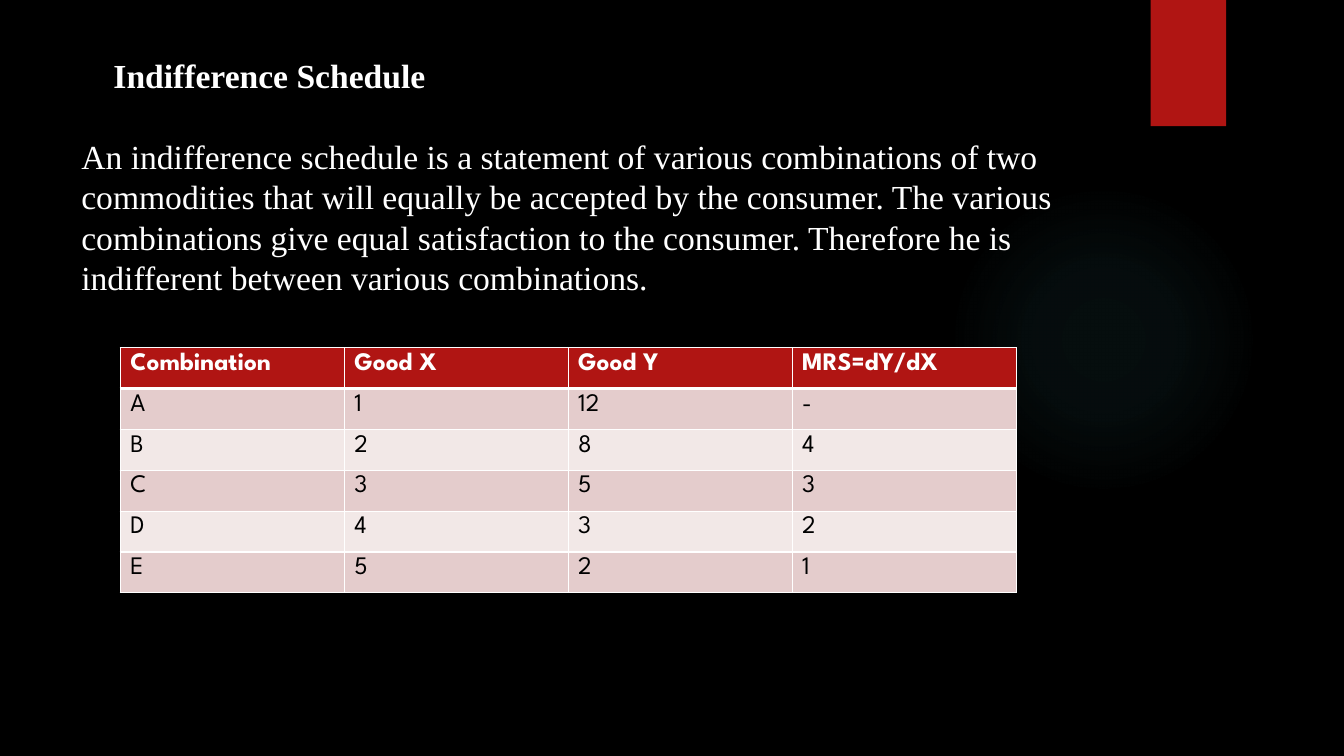
from lxml import etree
from pptx import Presentation
from pptx.dml.color import RGBColor
from pptx.enum.shapes import MSO_SHAPE
from pptx.oxml.ns import qn
from pptx.util import Cm, Pt

OVAL = MSO_SHAPE.OVAL
RECTANGLE = MSO_SHAPE.RECTANGLE
BLACK = RGBColor(0x00, 0x00, 0x00)
WHITE = RGBColor(0xFF, 0xFF, 0xFF)
RED = RGBColor(0xB0, 0x15, 0x13)
ROSE = RGBColor(0xE4, 0xCC, 0xCC)
PALE_ROSE = RGBColor(0xF2, 0xE8, 0xE7)
TEAL = RGBColor(0x50, 0xB9, 0xC1)
BODY_FONT = "Times New Roman"
TABLE_FONT = "League Spartan"

HEADING = "Indifference Schedule"
DEFINITION = (
    "An indifference schedule is a statement of various combinations of two "
    "commodities that will equally be accepted by the consumer. The various "
    "combinations give equal satisfaction to the consumer. Therefore he is "
    "indifferent between various combinations."
)
SCHEDULE = [
    ("Combination", "Good X", "Good Y", "MRS=dY/dX"),
    ("A", "1", "12", "-"),
    ("B", "2", "8", "4"),
    ("C", "3", "5", "3"),
    ("D", "4", "3", "2"),
    ("E", "5", "2", "1"),
]
GLOW_STOPS = [(0, 7), (36, 6), (69, 0)]


def add_child(parent, tag, **attributes):
    return etree.SubElement(parent, qn(tag), attributes)


def add_plain_shape(slide, preset, left, top, width, height, color):
    shape = slide.shapes.add_shape(preset, left, top, width, height)
    shape.shadow.inherit = False
    shape.fill.solid()
    shape.fill.fore_color.rgb = color
    shape.line.fill.background()
    return shape


def add_glow(slide, left, top, size):
    glow = add_plain_shape(slide, OVAL, left, top, size, size, TEAL)
    properties = glow._element.spPr
    solid = properties.find(qn("a:solidFill"))
    gradient = etree.Element(qn("a:gradFill"), rotWithShape="1")
    stops = add_child(gradient, "a:gsLst")
    for position, opacity in GLOW_STOPS:
        stop = add_child(stops, "a:gs", pos=str(position * 1000))
        color = add_child(stop, "a:srgbClr", val=str(TEAL))
        add_child(color, "a:alpha", val=str(opacity * 1000))
    center = add_child(gradient, "a:path", path="circle")
    add_child(center, "a:fillToRect", l="50000", t="50000", r="50000", b="50000")
    properties.replace(solid, gradient)


def add_run(paragraph, text, font_name, size, color, bold):
    run = paragraph.add_run()
    run.text = text
    run.font.name = font_name
    run.font.size = Pt(size)
    run.font.color.rgb = color
    run.font.bold = bold


def add_statement(slide, left, top, width, height):
    frame = slide.shapes.add_textbox(left, top, width, height).text_frame
    frame.word_wrap = True
    heading = frame.paragraphs[0]
    heading._p.get_or_add_pPr().set("indent", str(Cm(0.81)))
    definition = frame.add_paragraph()
    definition.space_before = Pt(28.8)
    for paragraph, text, bold in ((heading, HEADING, True), (definition, DEFINITION, False)):
        paragraph.line_spacing = Pt(28.8)
        add_run(paragraph, text, BODY_FONT, 24, WHITE, bold)


def set_borders(cell, top_width, bottom_width):
    properties = cell._tc.get_or_add_tcPr()
    widths = {"a:lnL": 1, "a:lnR": 1, "a:lnT": top_width, "a:lnB": bottom_width}
    for tag, width in widths.items():
        border = add_child(properties, tag, w=str(Pt(width)))
        add_child(add_child(border, "a:solidFill"), "a:srgbClr", val=str(WHITE))


def add_schedule(slide, left, top, width, height):
    table = slide.shapes.add_table(
        len(SCHEDULE), len(SCHEDULE[0]), left, top, width, height
    ).table
    for row_index, values in enumerate(SCHEDULE):
        is_header = row_index == 0
        band = RED if is_header else ROSE if row_index % 2 else PALE_ROSE
        for column_index, value in enumerate(values):
            cell = table.cell(row_index, column_index)
            set_borders(cell, 3 if row_index == 1 else 1, 3 if is_header else 1)
            cell.fill.solid()
            cell.fill.fore_color.rgb = band
            text_color = WHITE if is_header else BLACK
            add_run(cell.text_frame.paragraphs[0], value, TABLE_FONT, 18, text_color, is_header)


def main():
    presentation = Presentation()
    presentation.slide_width = Cm(33.87)
    presentation.slide_height = Cm(19.05)
    slide = presentation.slides.add_slide(presentation.slide_layouts[6])
    slide.background.fill.solid()
    slide.background.fill.fore_color.rgb = BLACK
    add_glow(slide, Cm(23.9), Cm(4.65), Cm(7.82))
    add_plain_shape(slide, RECTANGLE, Cm(29), Cm(0), Cm(1.9), Cm(3.18), RED)
    add_statement(slide, Cm(1.8), Cm(1.27), Cm(26.14), Cm(6.5))
    add_schedule(slide, Cm(3.03), Cm(8.76), Cm(22.58), Cm(6.18))
    presentation.save("out.pptx")


if __name__ == "__main__":
    main()
